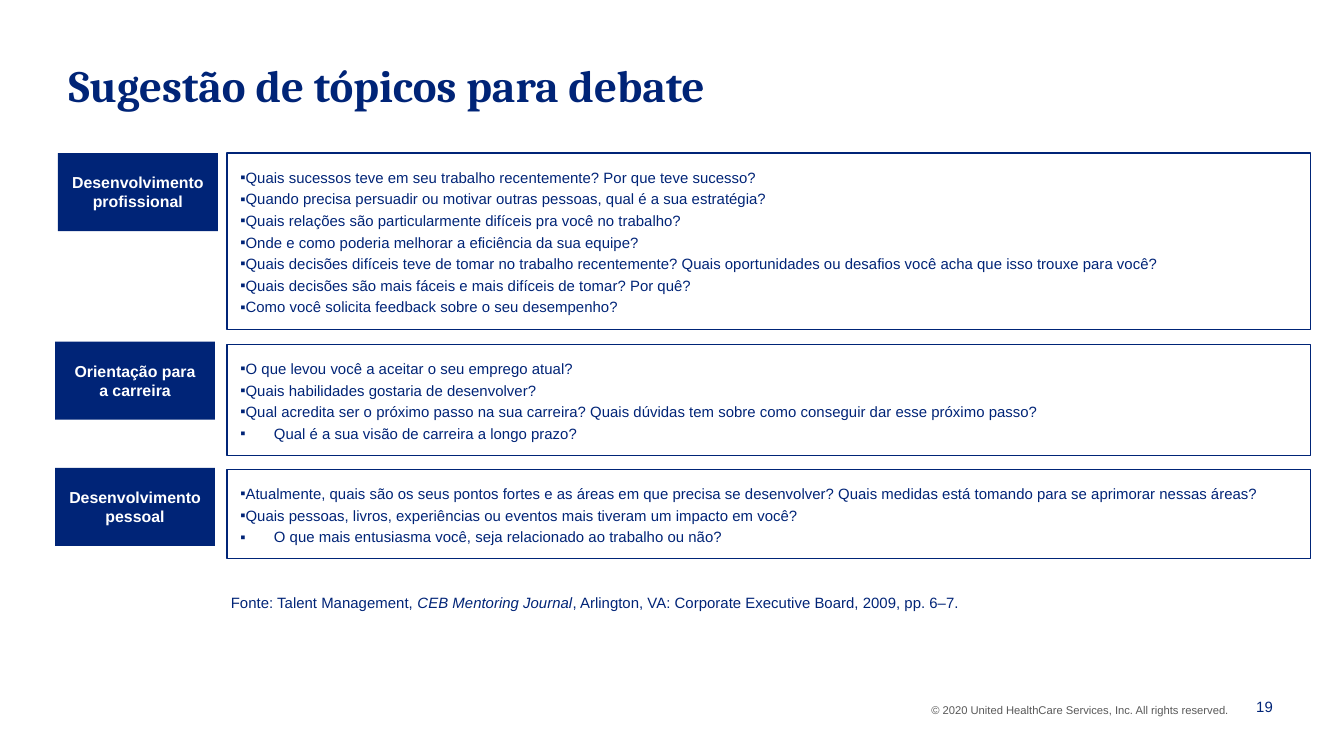
from lxml.etree import SubElement
from pptx import Presentation
from pptx.dml.color import RGBColor
from pptx.enum.shapes import MSO_SHAPE
from pptx.enum.text import MSO_ANCHOR, MSO_AUTO_SIZE, PP_ALIGN
from pptx.oxml.ns import qn
from pptx.util import Pt

COLORS = {"navy": "002477", "white": "FFFFFF", "gray": "595959"}
INSET = 7.2
LABEL_WIDTH, LABEL_HEIGHT = 85.7, 41.8
PANEL_LEFT, PANEL_WIDTH = 121.7, 580.3

# Each topic: label, label left and top, panel top and height, hanging indent,
# whether the last question is indented, questions
TOPICS = [
    ("Desenvolvimento profissional", 31, 82, 82, 94.6, 13.5, False, [
        "Quais sucessos teve em seu trabalho recentemente? Por que teve sucesso?",
        "Quando precisa persuadir ou motivar outras pessoas, qual é a sua estratégia?",
        "Quais relações são particularmente difíceis pra você no trabalho?",
        "Onde e como poderia melhorar a eficiência da sua equipe?",
        "Quais decisões difíceis teve de tomar no trabalho recentemente? "
        "Quais oportunidades ou desafios você acha que isso trouxe para você?",
        "Quais decisões são mais fáceis e mais difíceis de tomar? Por quê?",
        "Como você solicita feedback sobre o seu desempenho?",
    ]),
    ("Orientação para a carreira", 29.5, 183, 184.5, 59.4, 18, True, [
        "O que levou você a aceitar o seu emprego atual?",
        "Quais habilidades gostaria de desenvolver?",
        "Qual acredita ser o próximo passo na sua carreira? "
        "Quais dúvidas tem sobre como conseguir dar esse próximo passo?",
        "Qual é a sua visão de carreira a longo prazo?",
    ]),
    ("Desenvolvimento pessoal", 29.5, 250.6, 251.5, 47.7, 18, True, [
        "Atualmente, quais são os seus pontos fortes e as áreas em que precisa se desenvolver? "
        "Quais medidas está tomando para se aprimorar nessas áreas?",
        "Quais pessoas, livros, experiências ou eventos mais tiveram um impacto em você?",
        "O que mais entusiasma você, seja relacionado ao trabalho ou não?",
    ]),
]


def add_run(paragraph, text, size, color="navy", font="Arial", bold=False, italic=False):
    run = paragraph.add_run()
    run.text = text
    run.font.name = font
    run.font.size = Pt(size)
    run.font.bold = bold
    run.font.italic = italic
    run.font.color.rgb = RGBColor.from_string(COLORS[color])


def set_frame(shape, vertical_inset, anchor=MSO_ANCHOR.TOP):
    frame = shape.text_frame
    frame.word_wrap = True
    frame.auto_size = MSO_AUTO_SIZE.NONE
    frame.vertical_anchor = anchor
    frame.margin_left = frame.margin_right = Pt(INSET)
    frame.margin_top = frame.margin_bottom = Pt(vertical_inset)
    return frame


def add_rectangle(slide, box):
    shape = slide.shapes.add_shape(MSO_SHAPE.RECTANGLE, *map(Pt, box))
    shape.shadow.inherit = False
    return shape


def set_bullet(paragraph, margin, hanging):
    properties = paragraph._p.get_or_add_pPr()
    properties.set("marL", str(Pt(margin)))
    properties.set("indent", str(-Pt(hanging)))
    SubElement(properties, qn("a:buFont")).set("typeface", "Arial")
    SubElement(properties, qn("a:buChar")).set("char", "▪")


def add_title(slide, box, text):
    title = slide.shapes.title
    title.left, title.top, title.width, title.height = map(Pt, box)
    paragraph = set_frame(title, 3.6).paragraphs[0]
    paragraph.alignment = PP_ALIGN.LEFT
    add_run(paragraph, text, 24, font="Cambria", bold=True)


def add_label(slide, box, text):
    label = add_rectangle(slide, box)
    label.fill.solid()
    label.fill.fore_color.rgb = RGBColor.from_string(COLORS["navy"])
    label.line.fill.background()
    paragraph = set_frame(label, 0, MSO_ANCHOR.MIDDLE).paragraphs[0]
    paragraph.alignment = PP_ALIGN.CENTER
    add_run(paragraph, text, 8.5, "white", bold=True)


def add_questions(slide, box, questions, hanging, indent_last):
    panel = add_rectangle(slide, box)
    panel.fill.background()
    panel.line.color.rgb = RGBColor.from_string(COLORS["navy"])
    panel.line.width = Pt(0.75)
    frame = set_frame(panel, INSET)
    for index, question in enumerate(questions):
        paragraph = frame.add_paragraph() if index else frame.paragraphs[0]
        is_last = index == len(questions) - 1
        set_bullet(paragraph, hanging if indent_last and is_last else 0, hanging)
        paragraph.alignment = PP_ALIGN.LEFT
        paragraph.space_before = Pt(1 if index else 0)
        paragraph.space_after = Pt(1)
        add_run(paragraph, question, 8)
    # The first line keeps its distance from the border
    frame.margin_top = Pt(INSET + 1)


def add_text(slide, box, vertical_inset, anchor=MSO_ANCHOR.TOP, alignment=PP_ALIGN.LEFT):
    text_box = slide.shapes.add_textbox(*map(Pt, box))
    paragraph = set_frame(text_box, vertical_inset, anchor).paragraphs[0]
    paragraph.alignment = alignment
    return paragraph


def add_source(slide, box):
    paragraph = add_text(slide, box, 0)
    add_run(paragraph, "Fonte: Talent Management, ", 8)
    add_run(paragraph, "CEB Mentoring Journal", 8, italic=True)
    add_run(paragraph, ", Arlington, VA: Corporate Executive Board, 2009, pp. 6–7.", 8)


def add_footer(slide, box):
    left, top, width, height = box
    number_width = 28
    copyright_line = add_text(slide, (left, top + 5.8, 185.8, 14.4), 3.6)
    add_run(copyright_line, "© 2020 United HealthCare Services, Inc. All rights reserved.", 6, "gray")
    number_box = (left + width - number_width, top, number_width, height)
    number = add_text(slide, number_box, 3.6, MSO_ANCHOR.MIDDLE, PP_ALIGN.RIGHT)
    add_run(number, "19", 8)


def main():
    presentation = Presentation()
    presentation.slide_width, presentation.slide_height = Pt(720), Pt(405)
    slide = presentation.slides.add_slide(presentation.slide_layouts[5])

    add_title(slide, (29.5, 27.4, 571.7, 43.2), "Sugestão de tópicos para debate")

    # Topic rows
    for label, left, label_top, top, height, hanging, indent_last, questions in TOPICS:
        add_label(slide, (left, label_top, LABEL_WIDTH, LABEL_HEIGHT), label)
        panel_box = (PANEL_LEFT, top, PANEL_WIDTH, height)
        add_questions(slide, panel_box, questions, hanging, indent_last)

    # Source and footer
    add_source(slide, (116.6, 318.2, 452.9, 9.4))
    add_footer(slide, (491.8, 367.2, 197.2, 22.3))

    presentation.save("out.pptx")


if __name__ == "__main__":
    main()
